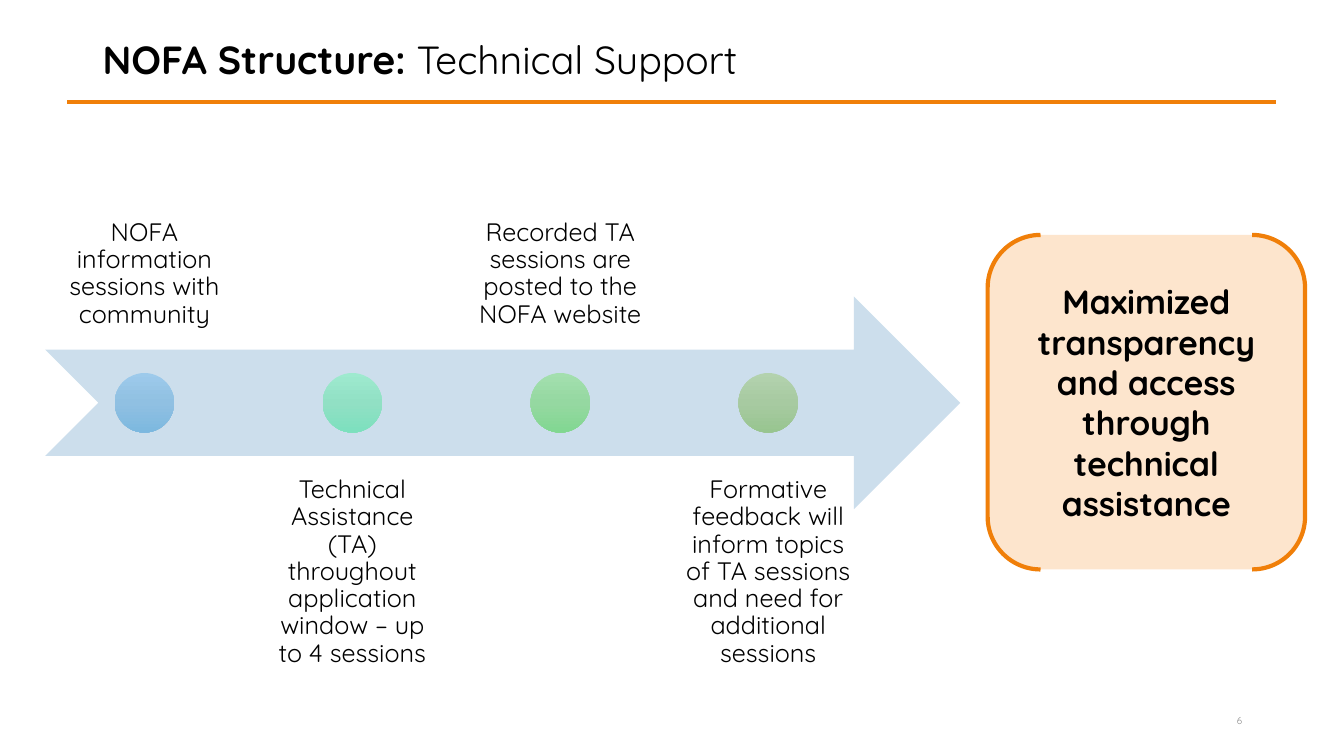
from copy import deepcopy

from pptx import Presentation
from pptx.dml.color import RGBColor
from pptx.enum.shapes import MSO_CONNECTOR, MSO_SHAPE as SHAPE
from pptx.enum.text import MSO_ANCHOR as ANCHOR, PP_ALIGN as ALIGN
from pptx.oxml.ns import qn
from pptx.oxml.xmlchemy import OxmlElement
from pptx.util import Cm, Pt

FONT = "Quicksand"
BLACK, ORANGE, PEACH, ARROW_BLUE, GREY = "000000", "F07F09", "FDE5CD", "CCDEEC", "8C8C8C"

STEPS = [
    ("NOFA information sessions with community", ("9DCAEB", "90C0E2", "7CB8DF")),
    ("Technical Assistance (TA) throughout application window – up to 4 sessions",
     ("9EEACF", "91E0C4", "7CE0BE")),
    ("Recorded TA sessions are posted to the NOFA website", ("A3DFAE", "95D8A1", "81D791")),
    ("Formative feedback will inform topics of TA sessions and need for additional sessions",
     ("B3D2AE", "A7CAA1", "98C590")),
]


def rgb(value):
    return RGBColor.from_string(value)


def apply(target, values):
    for name, value in values.items():
        setattr(target, name, value)


def write(shape, runs, size, color=BLACK, frame_format=None, paragraph_format=None):
    frame = shape.text_frame
    apply(frame, {"word_wrap": True, **(frame_format or {})})
    paragraph = frame.paragraphs[0]
    apply(paragraph, paragraph_format or {})
    for text, bold in runs:
        run = paragraph.add_run()
        run.text = text
        apply(run.font, {"name": FONT, "size": Pt(size), "bold": bold})
        run.font.color.rgb = rgb(color)


def add_text(slide, box, runs, size, **formats):
    shape = slide.shapes.add_textbox(*map(Cm, box))
    write(shape, runs, size, **formats)


def add_plain_shape(slide, kind, box, fill=None):
    shape = slide.shapes.add_shape(kind, *map(Cm, box))
    shape.shadow.inherit = False
    shape.line.fill.background()
    if fill:
        shape.fill.solid()
        shape.fill.fore_color.rgb = rgb(fill)
    return shape


def add_dot(slide, box, colors):
    dot = add_plain_shape(slide, SHAPE.OVAL, box)
    dot.fill.gradient()
    dot.fill.gradient_angle = 270
    stop_list = dot._element.spPr.find(".//" + qn("a:gsLst"))
    stop_list.insert(1, deepcopy(stop_list[0]))
    for stop, color, position in zip(dot.fill.gradient_stops, colors, (0, 0.5, 1)):
        stop.color.rgb = rgb(color)
        stop.position = position


def add_header(slide, box):
    left, top, width, height = box
    rule = slide.shapes.add_connector(
        MSO_CONNECTOR.STRAIGHT, *map(Cm, (left, top + height, left + width, top + height)))
    rule.line.color.rgb = rgb(ORANGE)
    rule.line.width = Pt(2.25)
    rule._element.spPr.append(OxmlElement("a:effectLst"))
    add_text(slide, (left + 0.64, top, 29.21, 2.34),
             [("NOFA Structure:", True), (" Technical Support", False)], 28,
             paragraph_format={"line_spacing": 0.9})


def add_timeline(slide, box):
    left, top, width, height = box
    middle = top + height / 2
    pitch, label_width, label_height, label_gap, dot_size = 5.24, 5, 6.02, 1.51, 1.5
    add_plain_shape(slide, SHAPE.NOTCHED_RIGHT_ARROW, box, ARROW_BLUE)
    for index, (label, colors) in enumerate(STEPS):
        above = index % 2 == 0
        label_left = left + index * pitch
        label_top = middle - label_gap - label_height if above else middle + label_gap
        insets = {f"margin_{side}": Cm(0.36) for side in ("left", "top", "right", "bottom")}
        anchor = ANCHOR.BOTTOM if above else ANCHOR.TOP
        add_text(slide, (label_left, label_top, label_width, label_height), [(label, False)], 18,
                 frame_format={**insets, "vertical_anchor": anchor},
                 paragraph_format={"alignment": ALIGN.CENTER, "line_spacing": 0.9,
                                   "space_after": Pt(6.3)})
        dot_left = label_left + (label_width - dot_size) / 2
        add_dot(slide, (dot_left, middle - dot_size / 2, dot_size, dot_size), colors)


def add_outcome(slide, box):
    bracket = add_plain_shape(slide, SHAPE.DOUBLE_BRACKET, box, PEACH)
    bracket.line.color.rgb = rgb(ORANGE)
    bracket.line.width = Pt(3)
    write(bracket, [("Maximized transparency and access through technical assistance", True)], 24,
          frame_format={"vertical_anchor": ANCHOR.MIDDLE},
          paragraph_format={"alignment": ALIGN.CENTER})


def add_page_number(slide, box):
    add_text(slide, box, [("6", False)], 7, color=GREY,
             frame_format={"vertical_anchor": ANCHOR.MIDDLE},
             paragraph_format={"alignment": ALIGN.RIGHT})


def main():
    presentation = Presentation()
    apply(presentation, {"slide_width": Cm(33.87), "slide_height": Cm(19.05)})
    slide = presentation.slides.add_slide(presentation.slide_layouts[6])
    add_header(slide, (1.7, 0.89, 30.46, 1.68))
    add_timeline(slide, (1.14, 7.47, 23.06, 5.36))
    add_outcome(slide, (24.89, 5.92, 8, 8.43))
    add_page_number(slide, (23.93, 17.65, 7.62, 1.02))
    presentation.save("out.pptx")


if __name__ == "__main__":
    main()
